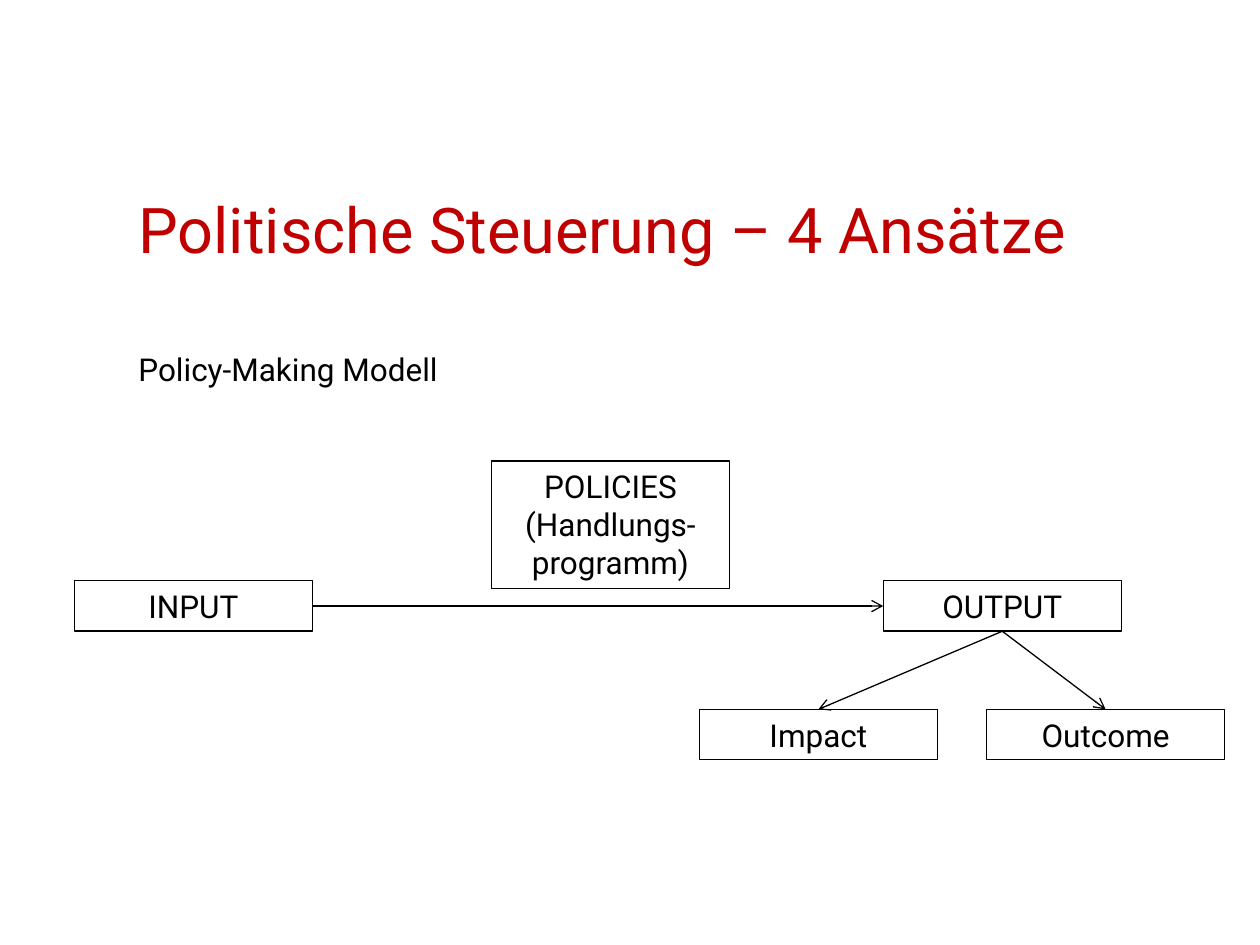
from lxml import etree
from pptx import Presentation
from pptx.dml.color import RGBColor
from pptx.enum import shapes, text
from pptx.oxml.ns import qn
from pptx.util import Inches, Pt

RED = RGBColor(0xC0, 0x00, 0x00)
BLACK = RGBColor(0x00, 0x00, 0x00)
FONT = "Roboto"
BOX_W, BOX_H = 1.89, 0.4


def write(sp, words, size, color, **formats):
    """Put one paragraph of text into a shape."""
    tf = sp.text_frame
    tf.word_wrap = True
    for name, value in formats.items():
        setattr(tf, name, value)
    p = tf.paragraphs[0]
    r = p.add_run()
    r.text = words
    for name, value in {"name": FONT, "size": Pt(size)}.items():
        setattr(r.font, name, value)
    r.font.color.rgb = color
    return p


def add_heading(s, words, box, size, color, anchor):
    sp = s.shapes.add_textbox(*map(Inches, box))
    write(sp, words, size, color, vertical_anchor=anchor)


def add_box(s, words, left, top, height=BOX_H):
    sp = s.shapes.add_shape(shapes.MSO_SHAPE.RECTANGLE, Inches(left), Inches(top),
                            Inches(BOX_W), Inches(height))
    sp.shadow.inherit = False
    sp.fill.background()
    sp.line.color.rgb = BLACK
    sp.line.width = Pt(0.75)
    p = write(sp, words, 18, BLACK, vertical_anchor=text.MSO_ANCHOR.TOP,
              auto_size=text.MSO_AUTO_SIZE.SHAPE_TO_FIT_TEXT)
    p.alignment = text.PP_ALIGN.CENTER
    return sp


def add_arrow(s, start, start_site, end, end_site):
    """Join two boxes; sites are 0 top, 1 left, 2 bottom, 3 right."""
    c = s.shapes.add_connector(shapes.MSO_CONNECTOR.STRAIGHT, 0, 0, 0, 0)
    c.begin_connect(start, start_site)
    c.end_connect(end, end_site)
    c.line.color.rgb = BLACK
    c.line.width = Pt(0.75)
    etree.SubElement(c.line._get_or_add_ln(), qn("a:tailEnd"), type="arrow")
    etree.SubElement(c._element.spPr, qn("a:effectLst"))


def add_policy_model(s, left, top):
    """Flow from input to output, with the policies above the arrow."""
    main_row, result_row = top + 0.95, top + 1.97
    source = add_box(s, "INPUT", left, main_row)
    output = add_box(s, "OUTPUT", left + 6.42, main_row)
    add_box(s, "POLICIES (Handlungs-programm)", left + 3.31, top, 1.01)
    add_arrow(s, source, 3, output, 1)

    # Results of the output
    for words, offset in (("Impact", 4.96), ("Outcome", 7.24)):
        result = add_box(s, words, left + offset, result_row)
        add_arrow(s, output, 2, result, 0)


def main():
    prs = Presentation()
    prs.slide_width, prs.slide_height = Inches(10), Inches(7.5)
    s = prs.slides.add_slide(prs.slide_layouts[6])

    # Title and subject
    add_heading(s, "Politische Steuerung – 4 Ansätze", (1, 0.91, 8, 1.25),
                36, RED, text.MSO_ANCHOR.BOTTOM)
    add_heading(s, "Policy-Making Modell", (1, 2.73, 8, 4.01),
                18, BLACK, text.MSO_ANCHOR.TOP)

    # Diagram
    add_policy_model(s, 0.59, 3.66)
    prs.save("out.pptx")


if __name__ == "__main__":
    main()
